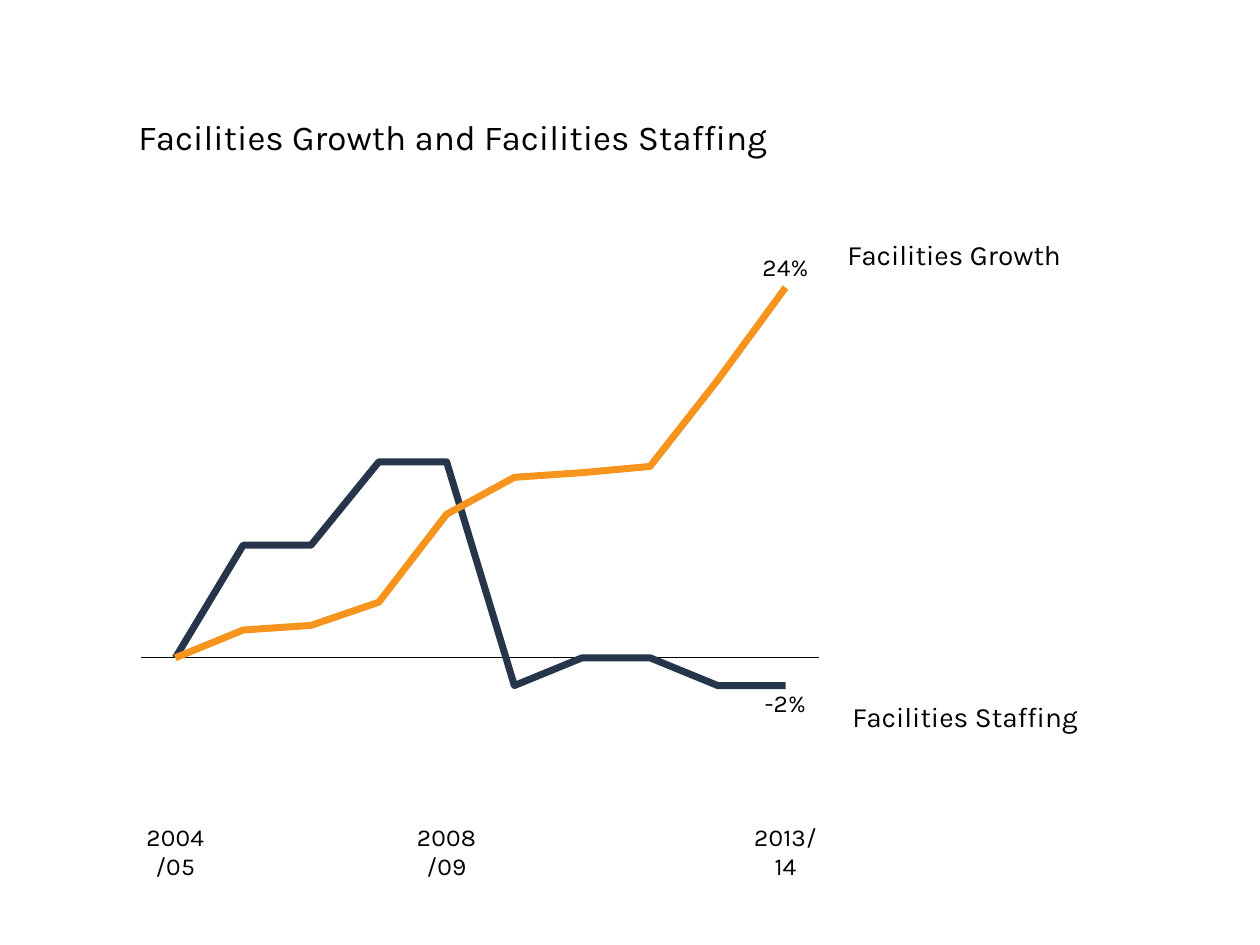
from lxml import etree
from pptx import Presentation
from pptx.chart.data import CategoryChartData
from pptx.dml.color import RGBColor
from pptx.enum.chart import XL_CHART_TYPE, XL_LABEL_POSITION, XL_TICK_LABEL_POSITION, XL_TICK_MARK
from pptx.enum.text import MSO_ANCHOR
from pptx.oxml.ns import qn
from pptx.util import Emu, Inches, Pt

LINE_CHART = XL_CHART_TYPE.LINE
ABOVE = XL_LABEL_POSITION.ABOVE
BELOW = XL_LABEL_POSITION.BELOW
LABELS_LOW = XL_TICK_LABEL_POSITION.LOW
NO_TICK = XL_TICK_MARK.NONE
MIDDLE = MSO_ANCHOR.MIDDLE
TOP = MSO_ANCHOR.TOP

PIXELS_PER_INCH = 126
FONT = "Karla"
BLACK = "000000"
NAVY = "26354A"
ORANGE = "F7941E"

YEARS = ["2004/05", "", "", "", "2008/09", "", "", "", "", "2013/14"]
STAFFING = [0, 0.073, 0.073, 0.127, 0.127, -0.018, 0, 0, -0.018, -0.018]
GROWTH = [0, 0.018, 0.021, 0.036, 0.093, 0.117, 0.12, 0.124, 0.18, 0.24]
SERIES = [
    ("Facilities Staffing", STAFFING, NAVY, BELOW),
    ("Facilities Growth", GROWTH, ORANGE, ABOVE),
]
PLOT_LAYOUT = [
    ("layoutTarget", "inner"), ("xMode", "edge"), ("yMode", "edge"),
    ("x", "0.005"), ("y", "0.038"), ("w", "0.621"), ("h", "0.868"),
]


def px(length):
    return Emu(round(length * Inches(1) / PIXELS_PER_INCH))


def color(value):
    return RGBColor.from_string(value)


class SlideBuilder:
    def __init__(self, slide, font_name, text_color):
        self.slide = slide
        self.font_name = font_name
        self.text_color = text_color

    def style_font(self, font, size):
        font.name = self.font_name
        font.size = Pt(size)
        font.color.rgb = color(self.text_color)

    def text(self, content, left, top, width, height, size, anchor=TOP, wrap=False):
        shape = self.slide.shapes.add_textbox(px(left), px(top), px(width), px(height))
        text_frame = shape.text_frame
        text_frame.text = content
        text_frame.word_wrap = wrap
        text_frame.vertical_anchor = anchor
        self.style_font(text_frame.paragraphs[0].runs[0].font, size)

    def line_chart(self, categories, series_list, left, top, width, height):
        data = CategoryChartData(number_format="0%")
        data.categories = categories
        for name, values, _, _ in series_list:
            data.add_series(name, values)
        chart = self.slide.shapes.add_chart(
            LINE_CHART, px(left), px(top), px(width), px(height), data).chart
        chart.has_legend = False
        chart.has_title = False
        self.style_font(chart.font, 14)
        self.style_axes(chart)
        self.set_plot_layout(chart)
        plot = chart.plots[0]
        plot.vary_by_categories = False
        for series, (_, values, line_color, position) in zip(plot.series, series_list):
            series.smooth = False
            series.format.line.width = Pt(4)
            series.format.line.color.rgb = color(line_color)
            self.label_point(series, len(values) - 1, position)

    def style_axes(self, chart):
        value_axis = chart.value_axis
        value_axis.minimum_scale = -0.1
        value_axis.maximum_scale = 0.3
        value_axis.has_major_gridlines = False
        value_axis.visible = False
        category_axis = chart.category_axis
        category_axis.tick_label_position = LABELS_LOW
        category_axis.major_tick_mark = NO_TICK
        category_axis.format.line.width = Pt(0.75)
        category_axis.format.line.color.rgb = color(self.text_color)
        self.style_font(category_axis.tick_labels.font, 14)

    def set_plot_layout(self, chart):
        plot_area = chart.plots[0]._element.getparent()
        for layout in plot_area.findall(qn("c:layout")):
            plot_area.remove(layout)
        layout = etree.Element(qn("c:layout"))
        manual = etree.SubElement(layout, qn("c:manualLayout"))
        for tag, value in PLOT_LAYOUT:
            etree.SubElement(manual, qn(f"c:{tag}")).set("val", value)
        plot_area.insert(0, layout)

    def label_point(self, series, index, position):
        label = series.points[index].data_label
        self.style_font(label.font, 14)
        label.position = position
        element = series._element.find(".//" + qn("c:dLbl"))
        for tag in ("showLegendKey", "showCatName", "showSerName", "showPercent"):
            element.find(qn(f"c:{tag}")).set("val", "0")
        element.find(qn("c:showVal")).set("val", "1")
        for tag in ("showVal", "showLegendKey", "showCatName", "showSerName"):
            series._element.find(qn("c:dLbls")).find(qn(f"c:{tag}")).set("val", "0")


def main():
    presentation = Presentation()
    presentation.slide_width = Inches(10)
    presentation.slide_height = Inches(7.5)
    slide = presentation.slides.add_slide(presentation.slide_layouts[6])
    builder = SlideBuilder(slide, FONT, BLACK)
    builder.line_chart(YEARS, SERIES, 136, 168, 1092, 714)
    builder.text("Facilities Growth and Facilities Staffing", 126, 94, 1040, 84, 20, MIDDLE, True)
    builder.text("Facilities Staffing", 840, 693, 280, 47, 16)
    builder.text("Facilities Growth", 835, 231, 289, 54, 16)
    presentation.save("out.pptx")


if __name__ == "__main__":
    main()
